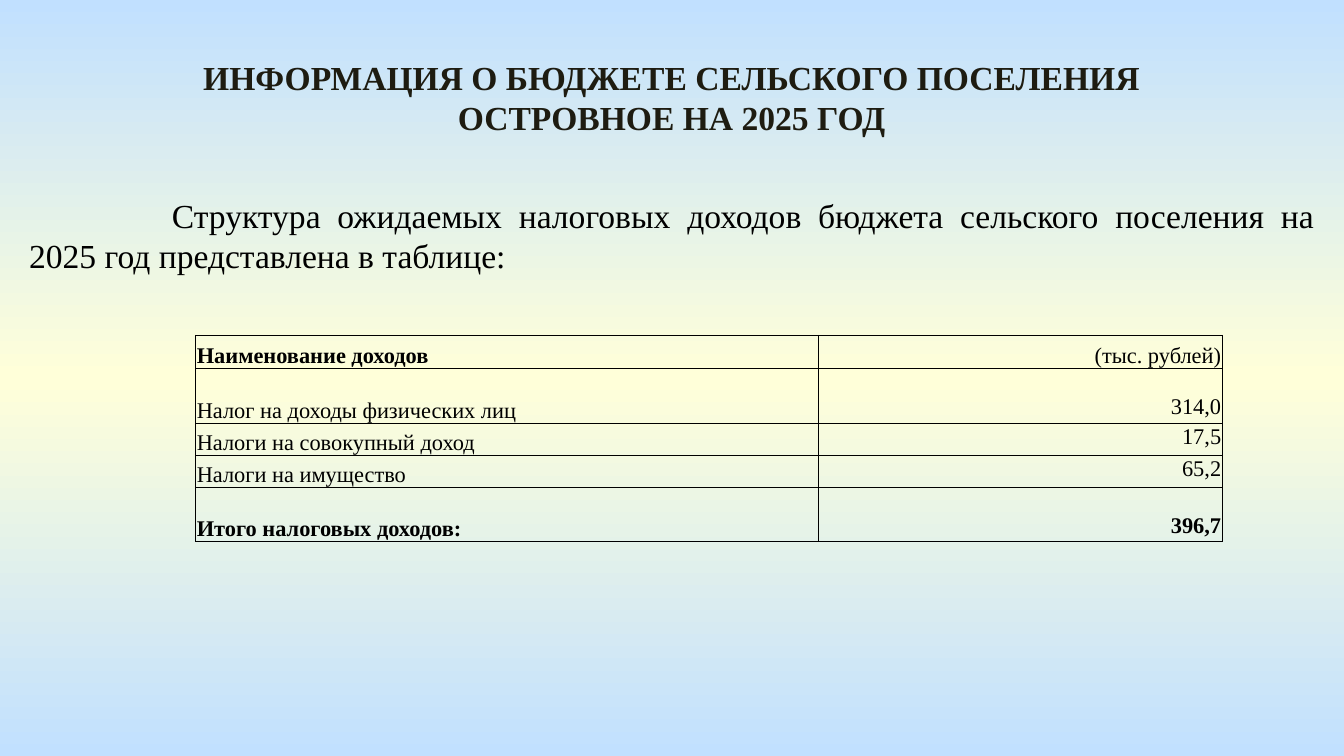
from copy import deepcopy

from lxml.etree import SubElement
from pptx import Presentation
from pptx.dml.color import RGBColor
from pptx.enum.text import MSO_ANCHOR, MSO_AUTO_SIZE, PP_ALIGN
from pptx.oxml.ns import qn
from pptx.util import Cm, Pt

COLORS = {"sky": "C1E0FF", "cream": "FFFFD9", "title": "1E1C11", "text": "000000"}
FONT = "Times New Roman"

TITLE = "ИНФОРМАЦИЯ О БЮДЖЕТЕ СЕЛЬСКОГО ПОСЕЛЕНИЯ ОСТРОВНОЕ НА 2025 ГОД"
INTRO = ("Структура ожидаемых налоговых доходов бюджета сельского поселения "
         "на 2025 год представлена в таблице:")
# name, amount, row height in cm, name bold, amount bold
INCOME = [
    ("Наименование доходов", "(тыс. рублей)", 0.62, True, False),
    ("Налог на доходы физических лиц", "314,0", 1.04, False, False),
    ("Налоги на совокупный доход", "17,5", 0.61, False, False),
    ("Налоги на имущество", "65,2", 0.60, False, False),
    ("Итого налоговых доходов:", "396,7", 1.02, True, True),
]
COLUMN_WIDTHS = (11.76, 7.64)
TALL_ROW = 1.0
AMOUNT_DROP = 0.49  # one line of table text


def style(paragraph, size, align, color="text", bold=False):
    paragraph.alignment = align
    font = paragraph.font
    font.name, font.size, font.bold = FONT, Pt(size), bold
    font.color.rgb = RGBColor.from_string(COLORS[color])


def set_background(slide):
    fill = slide.background.fill
    fill.gradient()
    fill.gradient_angle = 90
    stop_list = next(slide.element.iter(qn("a:gsLst")))
    stop_list.insert(1, deepcopy(stop_list[0]))
    for stop, position, color in zip(fill.gradient_stops, (0, 0.5, 1),
                                     ("sky", "cream", "sky")):
        stop.position = position
        stop.color.rgb = RGBColor.from_string(COLORS[color])


def write_frame(frame, text, align, **look):
    frame.word_wrap = True
    frame.auto_size = MSO_AUTO_SIZE.NONE
    frame.vertical_anchor = MSO_ANCHOR.TOP
    frame.text = text
    style(frame.paragraphs[0], 18, align, **look)


def add_borders(cell):
    properties = cell._tc.get_or_add_tcPr()
    for side in ("a:lnL", "a:lnR", "a:lnT", "a:lnB"):
        line = SubElement(properties, qn(side), w=str(Pt(0.5)))
        solid = SubElement(line, qn("a:solidFill"))
        SubElement(solid, qn("a:srgbClr"), val=COLORS["text"])


def write_cell(cell, text, align, anchor, bold, top=0.02):
    cell.text = text
    style(cell.text_frame.paragraphs[0], 12, align, bold=bold)
    cell.vertical_anchor = anchor
    cell.margin_left = cell.margin_right = Cm(0.02)
    cell.margin_top, cell.margin_bottom = Cm(top), 0
    add_borders(cell)
    cell.fill.background()


def add_income_table(slide):
    table = slide.shapes.add_table(
        len(INCOME), len(COLUMN_WIDTHS), Cm(3.7), Cm(6.34),
        Cm(sum(COLUMN_WIDTHS)), Cm(sum(row[2] for row in INCOME))).table
    table.first_row = table.horz_banding = False
    for column, width in zip(table.columns, COLUMN_WIDTHS):
        column.width = Cm(width)
    for index, (name, amount, height, name_bold, amount_bold) in enumerate(INCOME):
        table.rows[index].height = Cm(height)
        write_cell(table.cell(index, 0), name, PP_ALIGN.JUSTIFY,
                   MSO_ANCHOR.BOTTOM, name_bold)
        write_cell(table.cell(index, 1), amount, PP_ALIGN.RIGHT,
                   MSO_ANCHOR.TOP if index else MSO_ANCHOR.BOTTOM, amount_bold,
                   top=AMOUNT_DROP if height > TALL_ROW else 0.02)


def main():
    presentation = Presentation()
    presentation.slide_width, presentation.slide_height = Cm(25.4), Cm(14.29)
    slide = presentation.slides.add_slide(presentation.slide_layouts[5])
    set_background(slide)

    title = slide.shapes.title
    title.left, title.top, title.width, title.height = Cm(2.87), Cm(0.95), Cm(19.65), Cm(1.8)
    write_frame(title.text_frame, TITLE, PP_ALIGN.CENTER, color="title", bold=True)

    intro = slide.shapes.add_textbox(Cm(0.3), Cm(3.56), Cm(24.8), Cm(1.8)).text_frame
    write_frame(intro, INTRO, PP_ALIGN.JUSTIFY)
    intro.paragraphs[0]._p.get_or_add_pPr().set("indent", str(Cm(2.7)))

    add_income_table(slide)
    presentation.save("out.pptx")


if __name__ == "__main__":
    main()
